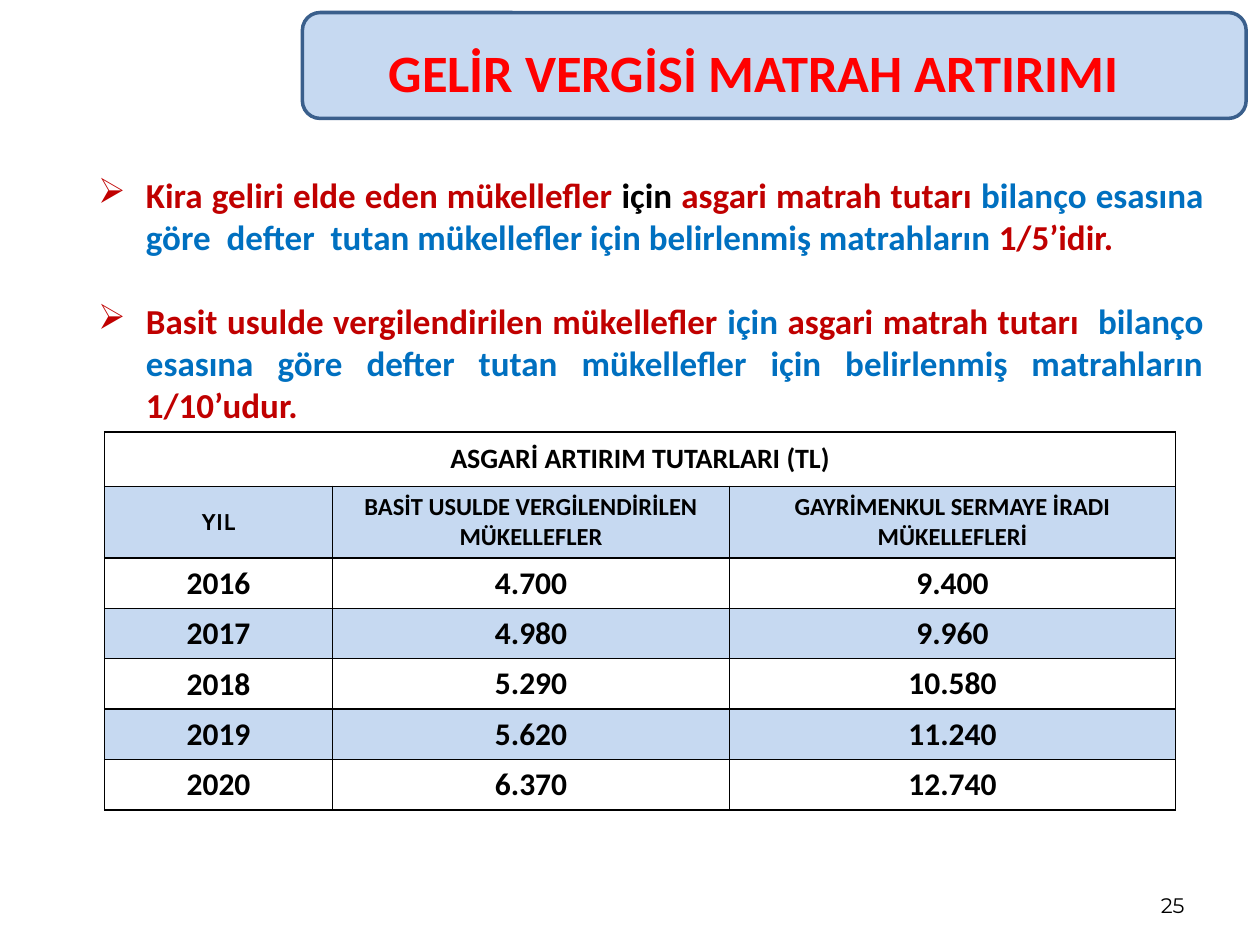
from pptx import Presentation
from pptx.dml.color import RGBColor
from pptx.enum.shapes import MSO_SHAPE as Shape
from pptx.enum.text import MSO_ANCHOR as Anchor, PP_ALIGN as Align
from pptx.oxml import parse_xml
from pptx.oxml.ns import nsdecls
from pptx.util import Inches, Pt

COLORS = {
    "red": "FF0000",
    "dark_red": "C00000",
    "blue": "0070C0",
    "black": "000000",
    "pale_blue": "C6D9F1",
    "outline": "3A5F8C",
}

BULLETS = [
    [("Kira geliri elde eden mükellefler ", "dark_red"),
     ("için ", "black"),
     ("asgari matrah tutarı ", "dark_red"),
     ("bilanço esasına göre  defter  tutan mükellefler için "
      "belirlenmiş matrahların ", "blue"),
     ("1/5’idir.", "dark_red")],
    [("Basit usulde vergilendirilen mükellefler ", "dark_red"),
     ("için ", "blue"),
     ("asgari matrah tutarı  ", "dark_red"),
     ("bilanço esasına göre defter tutan mükellefler için "
      "belirlenmiş matrahların ", "blue"),
     ("1/10’udur.", "dark_red")],
]

TABLE_ROWS = [
    ("ASGARİ ARTIRIM TUTARLARI (TL)", "", ""),
    ("YIL", "BASİT USULDE VERGİLENDİRİLEN MÜKELLEFLER",
     "GAYRİMENKUL SERMAYE İRADI MÜKELLEFLERİ"),
    ("2016", "4.700", "9.400"),
    ("2017", "4.980", "9.960"),
    ("2018", "5.290", "10.580"),
    ("2019", "5.620", "11.240"),
    ("2020", "6.370", "12.740"),
]
COLUMN_WIDTHS = (1.81, 3.15, 3.54)
ROW_HEIGHTS = (0.43, 0.53) + (0.39,) * 5


def color(name):
    return RGBColor.from_string(COLORS[name])


def set_font(font, size, name="Calibri", bold=True, tint=None):
    font.size = Pt(size)
    font.name = name
    font.bold = bold
    if tint:
        font.color.rgb = color(tint)


def add_text_box(page, left, top, width, height, anchor):
    box = page.shapes.add_textbox(*map(Inches, (left, top, width, height)))
    frame = box.text_frame
    frame.word_wrap = True
    frame.vertical_anchor = anchor
    return frame


def add_line(page, bounds, text, size, tint, align, anchor, **style):
    para = add_text_box(page, *bounds, anchor).paragraphs[0]
    para.text = text
    para.alignment = align
    set_font(para.font, size, tint=tint, **style)


def add_banner(page):
    banner = page.shapes.add_shape(
        Shape.ROUNDED_RECTANGLE, *map(Inches, (2.4, 0.1, 7.49, 0.84)))
    banner.shadow.inherit = False
    banner.fill.solid()
    banner.fill.fore_color.rgb = color("pale_blue")
    banner.line.color.rgb = color("outline")
    banner.line.width = Pt(2)


def add_bullets(page):
    frame = add_text_box(page, 0.2, 1.32, 9.45, 2.12, Anchor.MIDDLE)
    for index, pieces in enumerate(BULLETS):
        para = frame.add_paragraph() if index else frame.paragraphs[0]
        props = para._p.get_or_add_pPr()
        props.set("marL", str(Inches(0.86)))
        props.set("indent", str(Inches(-0.38)))
        props.append(parse_xml(f'<a:buChar {nsdecls("a")} char="➢"/>'))
        para.alignment = Align.JUSTIFY
        if index:
            para.space_before = Pt(24)
        set_font(para.font, 20)
        for text, tint in pieces:
            span = para.add_run()
            span.text = text
            span.font.color.rgb = color(tint)


def add_borders(cell):
    props = cell._tc.get_or_add_tcPr()
    for side in "LRTB":
        props.append(parse_xml(
            f'<a:ln{side} {nsdecls("a")} w="{Pt(1)}"><a:solidFill>'
            f'<a:srgbClr val="{COLORS["black"]}"/></a:solidFill></a:ln{side}>'))


def fill_cell(cell, text, row, column):
    add_borders(cell)
    # Every second row is tinted
    if row % 2:
        cell.fill.solid()
        cell.fill.fore_color.rgb = color("pale_blue")
    else:
        cell.fill.background()
    is_value = row > 1 and column > 0
    cell.vertical_anchor = Anchor.BOTTOM if is_value else Anchor.MIDDLE
    para = cell.text_frame.paragraphs[0]
    para.text = text
    para.alignment = Align.CENTER
    size = {0: 16, 1: 14}.get(row, 18)
    name = "Karla" if text == "YIL" else "Calibri"
    set_font(para.font, size, name, tint="black")


def add_amounts_table(page):
    table = page.shapes.add_table(
        len(TABLE_ROWS), len(COLUMN_WIDTHS), Inches(0.83), Inches(3.43),
        Inches(sum(COLUMN_WIDTHS)), Inches(sum(ROW_HEIGHTS))).table
    for column, width in zip(table.columns, COLUMN_WIDTHS):
        column.width = Inches(width)
    for row, height in zip(table.rows, ROW_HEIGHTS):
        row.height = Inches(height)
    for row, texts in enumerate(TABLE_ROWS):
        for column, text in enumerate(texts):
            fill_cell(table.cell(row, column), text, row, column)
    table.cell(0, 0).merge(table.cell(0, len(COLUMN_WIDTHS) - 1))


def main():
    deck = Presentation()
    deck.slide_width, deck.slide_height = Inches(10), Inches(7.5)
    page = deck.slides.add_slide(deck.slide_layouts[6])

    # Title banner
    add_banner(page)
    add_line(page, (2.64, 0.21, 6.69, 0.71), "GELİR VERGİSİ MATRAH ARTIRIMI",
             30, "red", Align.CENTER, Anchor.MIDDLE)

    # Rules and minimum amounts
    add_amounts_table(page)
    add_bullets(page)

    # Page number
    add_line(page, (7.17, 6.83, 2.33, 0.5), "25", 12, "black",
             Align.RIGHT, Anchor.BOTTOM, name="Montserrat", bold=False)

    deck.save("out.pptx")


if __name__ == "__main__":
    main()
